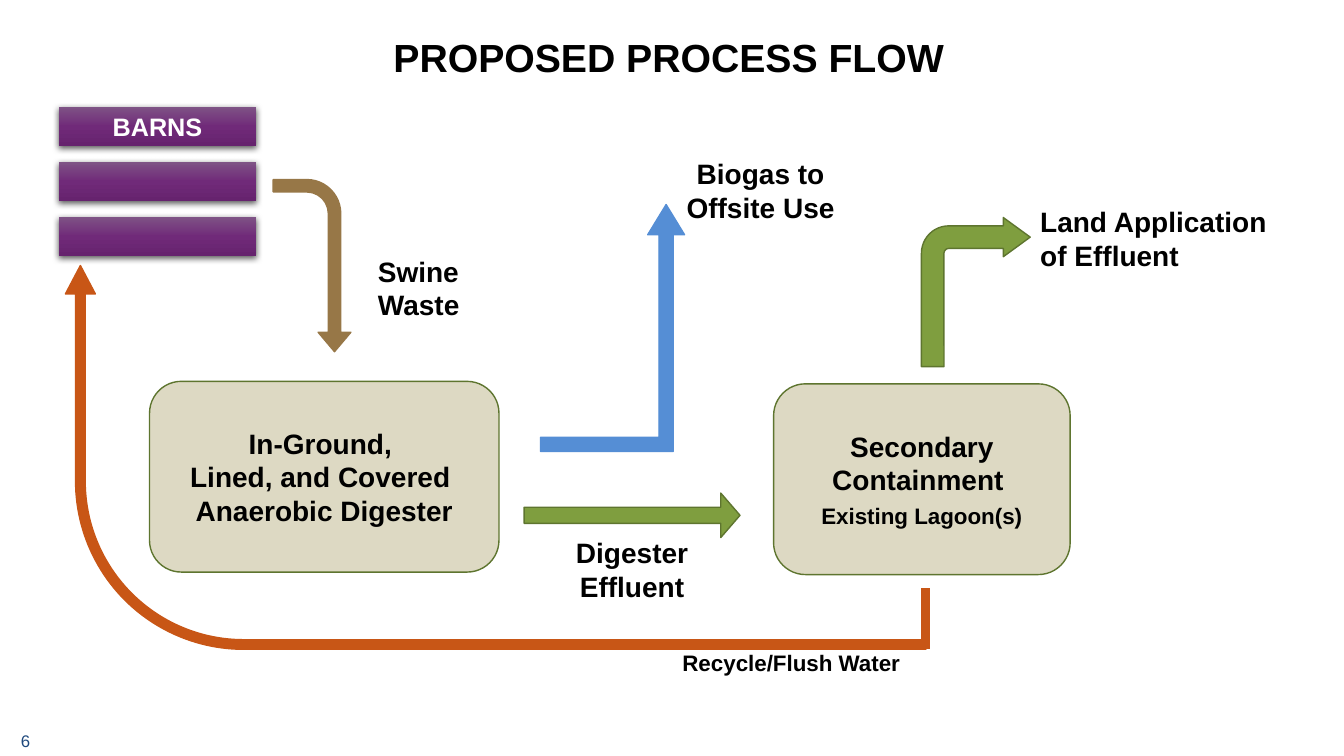
from typing import NamedTuple

from pptx import Presentation
from pptx.dml.color import RGBColor
from pptx.enum.shapes import MSO_CONNECTOR, MSO_SHAPE as Geo
from pptx.enum.text import MSO_ANCHOR as Anchor, PP_ALIGN as Align
from pptx.oxml import parse_xml
from pptx.oxml.ns import nsdecls
from pptx.util import Inches, Pt

SLIDE_W, SLIDE_H = Inches(13.33), Inches(7.5)
COLUMNS, ROWS = 160, 90
FONT = "Arial"
BLACK = RGBColor(0x00, 0x00, 0x00)
WHITE = RGBColor(0xFF, 0xFF, 0xFF)
NAVY = RGBColor(0x1F, 0x49, 0x7D)
PURPLES = {
    0: RGBColor(0x7F, 0x54, 0x86),
    50: RGBColor(0x70, 0x2A, 0x79),
    100: RGBColor(0x66, 0x23, 0x6E),
}
BROWN = RGBColor(0x97, 0x77, 0x47)
BEIGE = RGBColor(0xDD, 0xD9, 0xC3)
GREEN = RGBColor(0x7F, 0x9E, 0x3F)
DARK_GREEN = RGBColor(0x5E, 0x75, 0x2F)
BLUE = RGBColor(0x55, 0x8E, 0xD5)
ORANGE = RGBColor(0xC8, 0x56, 0x16)


class Box(NamedTuple):
    """An area measured in grid columns and rows."""

    left: float
    top: float
    width: float
    height: float

    def inner(self, left, top, width, height):
        """Return an area offset from this one's top left corner."""
        return Box(self.left + left, self.top + top, width, height)

    def emu(self):
        """Return left, top, width and height in slide units."""
        col, row = SLIDE_W / COLUMNS, SLIDE_H / ROWS
        return [round(n * unit) for n, unit in zip(self, (col, row, col, row))]


def write(frame, lines, align=Align.CENTER, color=BLACK, bold=True):
    """Fill a text frame with (text, size) paragraphs."""
    frame.word_wrap = True
    for i, (text, size) in enumerate(lines):
        paragraph = frame.paragraphs[0] if i == 0 else frame.add_paragraph()
        paragraph.alignment = align
        run = paragraph.add_run()
        run.text = text
        run.font.name, run.font.size, run.font.bold = FONT, Pt(size), bold
        run.font.color.rgb = color


def add_label(slide, box, text, size=20, align=Align.CENTER):
    """Place a free-standing bold label."""
    label = slide.shapes.add_textbox(*box.emu())
    write(label.text_frame, [(text, size)], align)


def add_block(slide, geometry, box, fill, line, adjustments=(), rotation=0):
    """Place a flat outlined shape."""
    block = slide.shapes.add_shape(geometry, *box.emu())
    block.shadow.inherit = False
    block.rotation = rotation
    for i, value in enumerate(adjustments):
        block.adjustments[i] = value
    block.fill.solid()
    block.fill.fore_color.rgb = fill
    block.line.color.rgb = line
    block.line.width = Pt(1)
    return block


def add_heading(slide, box):
    """Set the slide title."""
    title = slide.shapes.title
    title.left, title.top, title.width, title.height = box.emu()
    title.text_frame.vertical_anchor = Anchor.MIDDLE
    write(title.text_frame, [("PROPOSED PROCESS FLOW", 28)])


def add_page_number(slide, box):
    """Place the page number in the corner."""
    number = slide.shapes.add_textbox(*box.emu())
    number.text_frame.vertical_anchor = Anchor.MIDDLE
    write(number.text_frame, [("6", 12)], Align.LEFT, NAVY, bold=False)


def add_barns(slide, box):
    """Stack three shaded barns, the first one named."""
    barn_height = 4.7
    pitch = (box.height - barn_height) / 2
    stops = "".join(
        f'<a:gs pos="{share * 1000}"><a:srgbClr val="{color}"/></a:gs>'
        for share, color in PURPLES.items()
    )
    for i, name in enumerate(("BARNS", "", "")):
        area = box.inner(0, i * pitch, box.width, barn_height)
        barn = slide.shapes.add_shape(Geo.RECTANGLE, *area.emu())
        barn.line.fill.background()
        properties = barn.element.spPr
        properties.insert(2, parse_xml(
            f'<a:gradFill {nsdecls("a")} rotWithShape="1"><a:gsLst>{stops}</a:gsLst>'
            '<a:lin ang="5400000" scaled="0"/></a:gradFill>'))
        properties.append(parse_xml(
            f'<a:effectLst {nsdecls("a")}><a:outerShdw blurRad="57150" dist="19050" '
            'dir="5400000" algn="ctr" rotWithShape="0"><a:srgbClr val="000000">'
            '<a:alpha val="63000"/></a:srgbClr></a:outerShdw></a:effectLst>'))
        if name:
            barn.text_frame.vertical_anchor = Anchor.MIDDLE
            write(barn.text_frame, [(name, 18)], color=WHITE)


def add_swine_waste(slide, box):
    """Lead waste from the barns down to the digester."""
    add_block(slide, Geo.BENT_ARROW, box.inner(0, 0, 20.5, 9.25), BROWN, BROWN,
              (0.16, 0.211, 0.25, 0.438), 90)
    add_label(slide, box.inner(16.9, 2.65, 16, 9.25), "Swine Waste", align=Align.LEFT)


def add_stage(slide, box, lines, gap=0):
    """Place a rounded process stage, with a gap before its last line."""
    stage = add_block(slide, Geo.ROUNDED_RECTANGLE, box, BEIGE, DARK_GREEN)
    stage.text_frame.vertical_anchor = Anchor.MIDDLE
    write(stage.text_frame, lines)
    stage.text_frame.paragraphs[-1].space_before = Pt(gap)


def add_biogas(slide, box):
    """Lead biogas up and off the site."""
    add_block(slide, Geo.BENT_UP_ARROW, box.inner(0, 6.25, 17.15, 29.4), BLUE, BLUE,
              (0.099, 0.128, 0.21))
    add_label(slide, box.inner(15.7, 0, 21, 9.25), "Biogas to Offsite Use")


def add_effluent(slide, box):
    """Lead effluent from the digester to the containment."""
    add_block(slide, Geo.RIGHT_ARROW, box.inner(0, 0, box.width, 5.3), GREEN, DARK_GREEN,
              (0.363, 0.432))
    add_label(slide, box.inner(0, 4.45, box.width, 9.25), "Digester Effluent")


def add_land_application(slide, box):
    """Lead effluent from the containment to the land."""
    add_block(slide, Geo.BENT_ARROW, box.inner(0, 2.15, 12.95, 17.75), GREEN, DARK_GREEN,
              (0.207, 0.18, 0.247, 0.251))
    add_label(slide, box.inner(12.95, 0, 30.4, 9.25), "Land Application of Effluent",
              align=Align.LEFT)


def add_recycle(slide, box):
    """Return flush water from the containment to the barns."""
    turned = box.inner((box.width - box.height) / 2, (box.height - box.width) / 2,
                       box.height, box.width)
    add_block(slide, Geo.BENT_ARROW, turned, ORANGE, ORANGE,
              (0.025, 0.039, 0.074, 0.438), 270)
    x, y, _, rise = box.inner(box.width, box.height, 0, 7.3).emu()
    riser = slide.shapes.add_connector(MSO_CONNECTOR.STRAIGHT, x, y, x, y - rise)
    riser.line.color.rgb = ORANGE
    riser.line.width = Pt(6.75)
    riser.element.spPr.append(parse_xml(f'<a:effectLst {nsdecls("a")}/>'))
    add_label(slide, box.inner(72.25, 45.1, 33.85, 4.45), "Recycle/Flush Water", 16,
              Align.LEFT)


def main():
    """Build and save the process flow slide."""
    deck = Presentation()
    deck.slide_width, deck.slide_height = SLIDE_W, SLIDE_H
    slide = deck.slides.add_slide(deck.slide_layouts[5])
    add_heading(slide, Box(44, 3.4, 71.2, 6.8))
    add_page_number(slide, Box(1.3, 87.25, 36, 1.8))
    add_barns(slide, Box(7, 12.7, 23.5, 17.8))
    add_swine_waste(slide, Box(26.9, 27, 32.9, 11.9))
    add_stage(slide, Box(17.8, 45.4, 41.6, 22.7),
              [("In-Ground, ", 20), ("Lined, and Covered ", 20), ("Anaerobic Digester", 20)])
    add_effluent(slide, Box(62.4, 58.7, 25.7, 13.7))
    add_stage(slide, Box(92.1, 45.7, 35.3, 22.7),
              [("Secondary Containment ", 20), ("Existing Lagoon(s)", 16)], gap=4.5)
    add_biogas(slide, Box(64.35, 18.1, 36.7, 35.65))
    add_land_application(slide, Box(109.7, 23.75, 43.35, 19.9))
    add_recycle(slide, Box(7.8, 31.6, 102.4, 45.7))
    deck.save("out.pptx")


if __name__ == "__main__":
    main()
